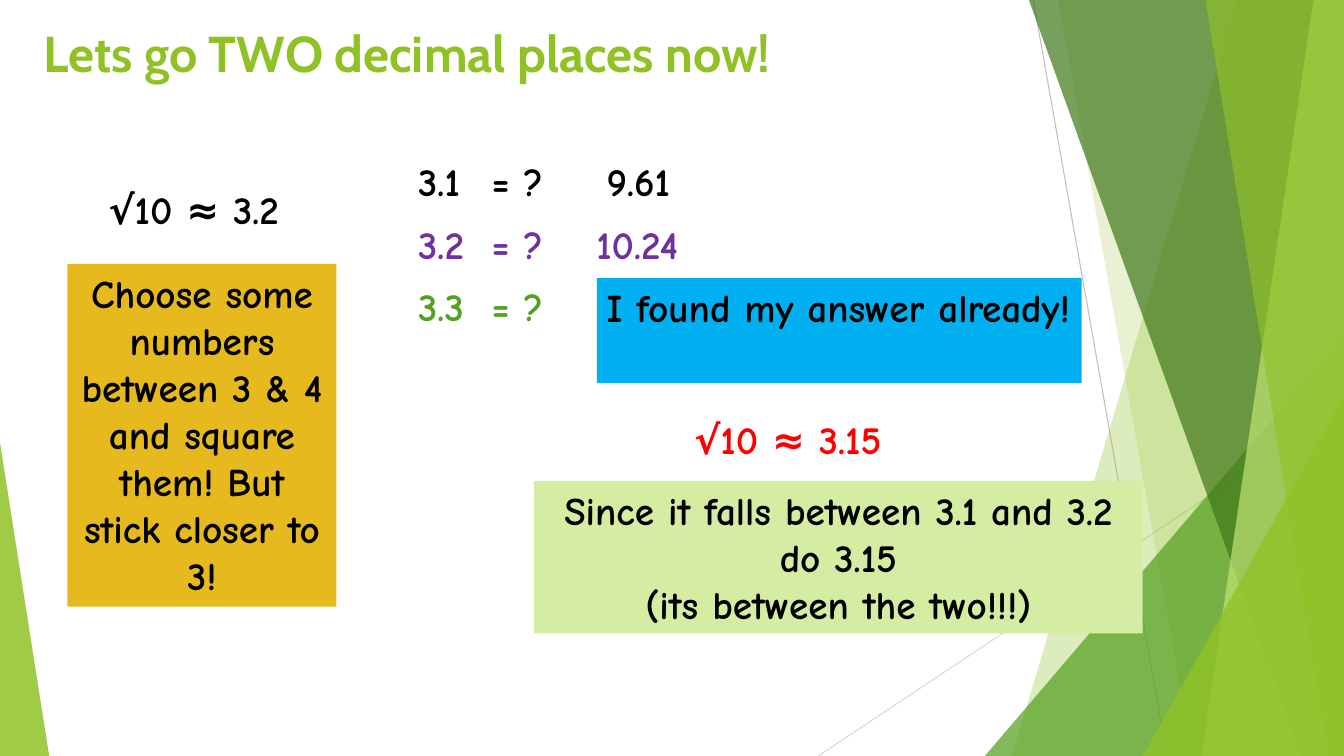
from lxml import etree
from pptx import Presentation
from pptx.dml.color import RGBColor
from pptx.enum.shapes import MSO_CONNECTOR, MSO_SHAPE
from pptx.enum.text import MSO_ANCHOR, PP_ALIGN
from pptx.oxml.ns import qn
from pptx.util import Cm, Pt

STRAIGHT = MSO_CONNECTOR.STRAIGHT
TRIANGLE = MSO_SHAPE.ISOSCELES_TRIANGLE
TOP = MSO_ANCHOR.TOP
LEFT, CENTER = PP_ALIGN.LEFT, PP_ALIGN.CENTER

BLACK = RGBColor(0x00, 0x00, 0x00)
RED = RGBColor(0xFF, 0x00, 0x00)
PURPLE = RGBColor(0x70, 0x30, 0xA0)
GREEN = RGBColor(0x54, 0xA0, 0x21)
LIME = RGBColor(0x90, 0xC2, 0x26)
FOREST = RGBColor(0x3F, 0x78, 0x19)
PALE_LIME = RGBColor(0xC0, 0xE4, 0x74)
MINT = RGBColor(0xD5, 0xED, 0xA2)
GOLD = RGBColor(0xE6, 0xB9, 0x1E)
SKY = RGBColor(0x00, 0xB0, 0xF0)
GREY = RGBColor(0xBF, 0xBF, 0xBF)
LIGHT_GREY = RGBColor(0xD9, 0xD9, 0xD9)

TITLE_FONT, BODY_FONT = "Cabin", "Comic Neue"
WIDTH, HEIGHT = 33.87, 19.05

TITLE = "Lets go TWO decimal places now!"
RAYS = [
    (26.04, 0, 29.41, HEIGHT, GREY),
    (WIDTH, 10.24, 20.62, HEIGHT, LIGHT_GREY),
]
FACETS = [
    ("band", 31.19, 25.5, LIME, 30),
    ("band", 26.67, 30.05, LIME, 20),
    ("corner", 24.82, 8.46, GREEN, 72),
    ("band", 25.93, 32.79, FOREST, 70),
    ("band", 33.1, 30.28, PALE_LIME, 70),
    ("band", 30.38, 33.48, LIME, 65),
    ("corner", 28.8, 9.98, LIME, 80),
]
LEFT_FACET = (0, 11.15, 1.24, LIME, 85)

SQUARES = [
    ("3.1\t= ?", "9.61", 15.04, BLACK),
    ("3.2\t= ?", "10.24", 14.78, PURPLE),
    ("3.3\t= ?", None, None, GREEN),
]
ROW_LEFT, ROW_TOP, ROW_STEP, ROW_HEIGHT = 10.29, 3.84, 1.58, 1.45
ROW_WIDTH, RESULT_WIDTH, EQUALS_TAB = 5.64, 3.89, 1.85

NOTES = [
    (["√10 ≈ 3.2"], (2.49, 4.55, 5.64, 1.45), BLACK, None, LEFT),
    (["Choose some numbers between 3 & 4 and square them! But stick closer to 3!"],
     (1.7, 6.65, 6.78, 8.64), BLACK, GOLD, CENTER),
    (["I found my answer already!"], (15.04, 7.01, 12.22, 2.64), BLACK, SKY, LEFT),
    (["√10 ≈ 3.15"], (17.25, 10.34, 6.99, 2.64), RED, None, LEFT),
    (["Since it falls between 3.1 and 3.2 do 3.15", "(its between the two!!!)"],
     (13.46, 12.12, 15.34, 3.84), BLACK, MINT, CENTER),
]


def paint(facet, color, opacity):
    facet.shadow.inherit = False
    facet.line.fill.background()
    facet.fill.solid()
    facet.fill.fore_color.rgb = color
    tint = facet.fill._xPr.find(qn("a:solidFill"))[0]
    etree.SubElement(tint, qn("a:alpha"), val=str(opacity * 1000))


def add_ray(slide, x1, y1, x2, y2, color):
    ray = slide.shapes.add_connector(STRAIGHT, Cm(x1), Cm(y1), Cm(x2), Cm(y2))
    ray.line.color.rgb = color
    ray.line.width = Pt(0.75)
    etree.SubElement(ray._element.spPr, qn("a:effectLst"))


def add_triangle(slide, left, top, width, peak, color, opacity):
    triangle = slide.shapes.add_shape(
        TRIANGLE, Cm(left), Cm(top), Cm(width), Cm(HEIGHT - top))
    triangle.adjustments[0] = peak
    paint(triangle, color, opacity)


def add_band(slide, top_x, bottom_x, color, opacity):
    outline = slide.shapes.build_freeform(Cm(top_x), 0)
    outline.add_line_segments(
        [(Cm(WIDTH), 0), (Cm(WIDTH), Cm(HEIGHT)), (Cm(bottom_x), Cm(HEIGHT))])
    paint(outline.convert_to_shape(), color, opacity)


def style(paragraph, font_name, size, color, align):
    paragraph.alignment = align
    for run in paragraph.runs:
        run.font.name = font_name
        run.font.size = Pt(size)
        run.font.bold = True
        run.font.color.rgb = color


def add_note(slide, lines, place, color, fill=None, align=LEFT):
    note = slide.shapes.add_textbox(*map(Cm, place))
    if fill is not None:
        note.fill.solid()
        note.fill.fore_color.rgb = fill
    frame = note.text_frame
    frame.word_wrap = True
    frame.text = "\n".join(lines)
    for paragraph in frame.paragraphs:
        style(paragraph, BODY_FONT, 28, color, align)
    return frame


def add_square(slide, row, question, result, result_left, color):
    top = ROW_TOP + row * ROW_STEP
    frame = add_note(slide, [question], (ROW_LEFT, top, ROW_WIDTH, ROW_HEIGHT), color)
    tabs = etree.SubElement(frame.paragraphs[0]._p.get_or_add_pPr(), qn("a:tabLst"))
    etree.SubElement(tabs, qn("a:tab"), pos=str(Cm(EQUALS_TAB)), algn="l")
    if result:
        add_note(slide, [result], (result_left, top, RESULT_WIDTH, ROW_HEIGHT), color)


def main():
    deck = Presentation()
    deck.slide_width, deck.slide_height = Cm(WIDTH), Cm(HEIGHT)
    slide = deck.slides.add_slide(deck.slide_layouts[5])

    for ray in RAYS:
        add_ray(slide, *ray)
    for kind, first, second, color, opacity in FACETS:
        if kind == "band":
            add_band(slide, first, second, color, opacity)
        else:
            add_triangle(slide, first, second, WIDTH - first, 1, color, opacity)
    left, top, width, color, opacity = LEFT_FACET
    add_triangle(slide, left, top, width, 0, color, opacity)

    title = slide.shapes.title
    title.left, title.top, title.width, title.height = map(Cm, (0.84, 0.43, 23.88, 3.66))
    title.text_frame.text = TITLE
    title.text_frame.vertical_anchor = TOP
    style(title.text_frame.paragraphs[0], TITLE_FONT, 36, LIME, LEFT)

    for row, square in enumerate(SQUARES):
        add_square(slide, row, *square)
    for note in NOTES:
        add_note(slide, *note)

    deck.save("out.pptx")


if __name__ == "__main__":
    main()
